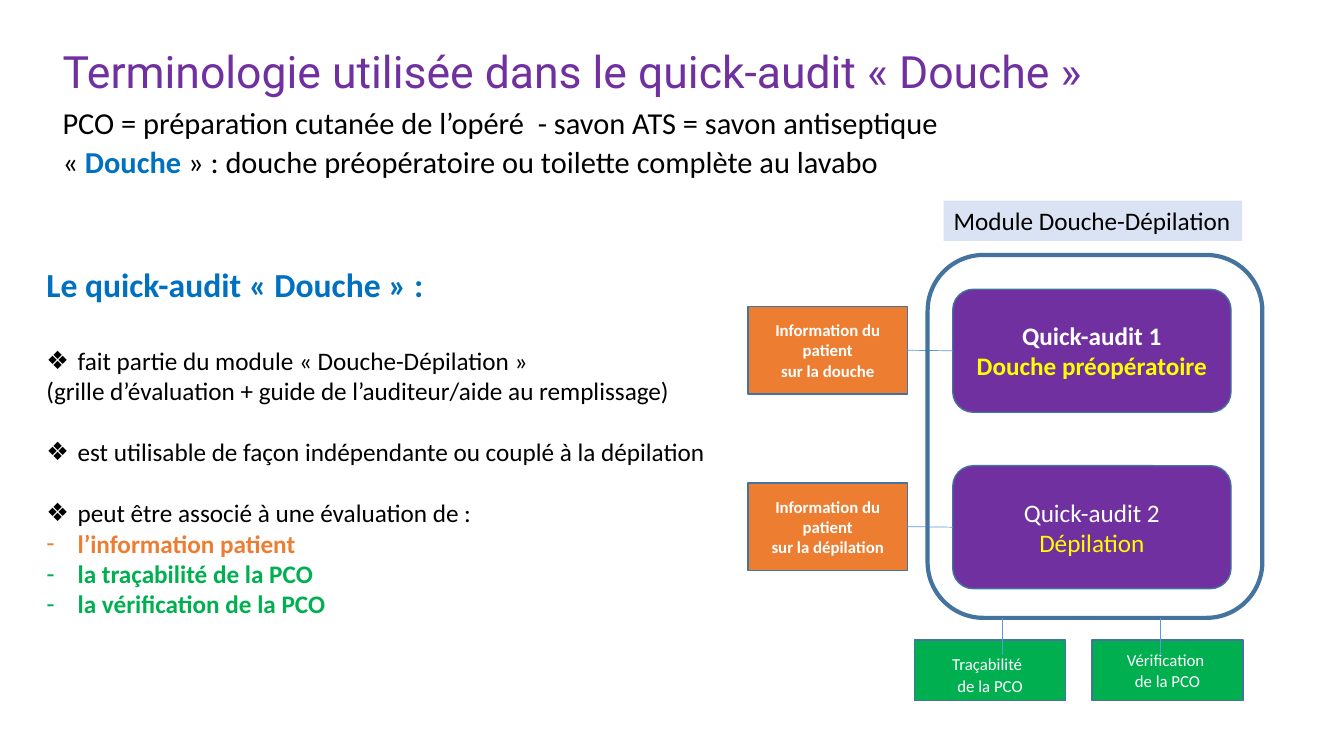
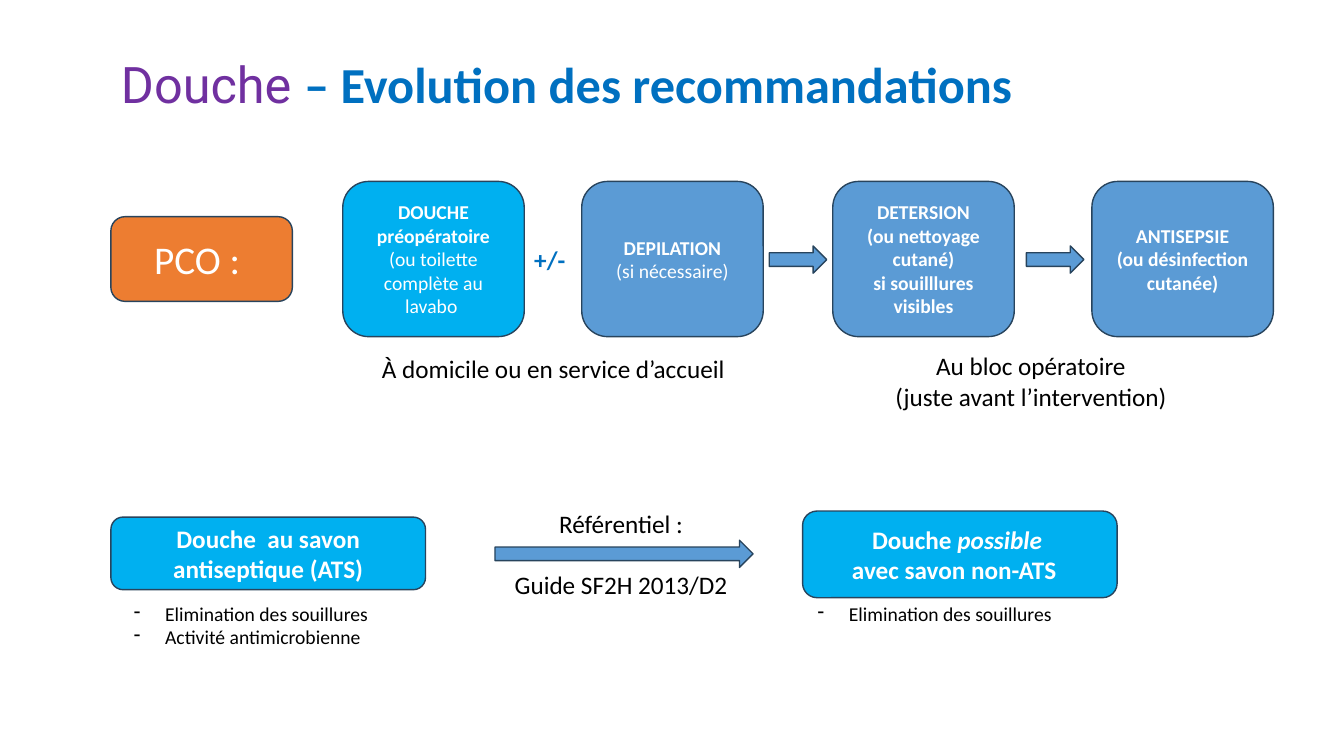
from dataclasses import dataclass, field

from lxml import etree
from pptx import Presentation
from pptx.dml.color import RGBColor
from pptx.enum.shapes import MSO_CONNECTOR, MSO_SHAPE
from pptx.enum.text import MSO_ANCHOR, MSO_AUTO_SIZE, PP_ALIGN
from pptx.oxml.ns import qn
from pptx.util import Inches, Pt

COLORS = {
    "purple": "7030A0", "blue": "0070C0", "sky": "00B0F0", "steel": "5B9BD5",
    "orange": "ED7D31", "green": "00B050", "yellow": "FFFF00", "pale": "DAE3F3",
    "white": "FFFFFF", "black": "000000", "outline": "43739E", "dark": "28445D",
}
LEFT, CENTER = PP_ALIGN.LEFT, PP_ALIGN.CENTER
LEFT_SIDE, RIGHT_SIDE = 1, 3


def rgb(name):
    return RGBColor.from_string(COLORS[name])


@dataclass
class Style:
    size: float = 18
    color: str = "black"
    bold: bool = False
    italic: bool = False
    font: str = "Calibri"


@dataclass
class Para:
    """A paragraph: (text, style changes) runs and its own spacing."""
    runs: list
    bullet: str = ""
    before: float = 0
    spacing: float = 1.0


def line(text, bullet="", before=0, spacing=1.0, **changes):
    """A paragraph with a single run."""
    return Para([(text, changes)], bullet, before, spacing)


@dataclass
class Deck:
    prs: object
    outline: str = "outline"
    slide: object = field(default=None)

    def new_slide(self, layout, outline):
        self.slide = self.prs.slides.add_slide(self.prs.slide_layouts[layout])
        self.outline = outline

    def set_text(self, frame, paragraphs, align=LEFT, **base):
        for index, content in enumerate(paragraphs):
            paragraph = frame.paragraphs[0] if index == 0 else frame.add_paragraph()
            paragraph.alignment = align
            paragraph.line_spacing = content.spacing
            paragraph.space_before = Pt(content.before)
            self.set_bullet(paragraph, content.bullet)
            for text, changes in content.runs:
                run = paragraph.add_run()
                run.text = text
                style = Style(**{**base, **changes})
                run.font.name = style.font
                run.font.size = Pt(style.size)
                run.font.bold = style.bold
                run.font.italic = style.italic
                run.font.color.rgb = rgb(style.color)

    def set_bullet(self, paragraph, char):
        properties = paragraph._p.get_or_add_pPr()
        indent = Inches(0.31) if char else 0
        properties.set("marL", str(indent))
        properties.set("indent", str(-indent))
        if char:
            etree.SubElement(properties, qn("a:buChar")).set("char", char)
        else:
            etree.SubElement(properties, qn("a:buNone"))

    def placeholder(self, idx, at, paragraphs, anchor=MSO_ANCHOR.TOP, **base):
        holder = self.slide.placeholders[idx]
        holder.left, holder.top, holder.width, holder.height = map(Inches, at)
        frame = holder.text_frame
        frame.word_wrap = True
        frame.auto_size = MSO_AUTO_SIZE.NONE
        frame.vertical_anchor = anchor
        self.set_text(frame, paragraphs, **base)

    def text(self, at, paragraphs, align=LEFT, wrap=True, fill=None, **base):
        box = self.slide.shapes.add_textbox(*map(Inches, at))
        if fill:
            box.fill.solid()
            box.fill.fore_color.rgb = rgb(fill)
        box.text_frame.word_wrap = wrap
        box.text_frame.auto_size = MSO_AUTO_SIZE.SHAPE_TO_FIT_TEXT
        self.set_text(box.text_frame, paragraphs, align, **base)

    def shape(self, kind, at, fill=None, paragraphs=(), weight=1, **base):
        shape = self.slide.shapes.add_shape(kind, *map(Inches, at))
        shape.shadow.inherit = False
        if fill:
            shape.fill.solid()
            shape.fill.fore_color.rgb = rgb(fill)
        else:
            shape.fill.background()
        shape.line.color.rgb = rgb(self.outline)
        shape.line.width = Pt(weight)
        shape.text_frame.word_wrap = True
        shape.text_frame.vertical_anchor = MSO_ANCHOR.MIDDLE
        self.set_text(shape.text_frame, paragraphs, CENTER, **{"color": "white", **base})
        return shape

    def rounded(self, *args, **options):
        return self.shape(MSO_SHAPE.ROUNDED_RECTANGLE, *args, **options)

    def rect(self, *args, **options):
        return self.shape(MSO_SHAPE.RECTANGLE, *args, **options)

    def arrow(self, left, top, width):
        self.shape(MSO_SHAPE.RIGHT_ARROW, (left, top, width, 0.27), "steel")

    def connector(self, start=(0, 0), end=(0, 0)):
        link = self.slide.shapes.add_connector(
            MSO_CONNECTOR.STRAIGHT, *map(Inches, (*start, *end)))
        link.line.color.rgb = rgb("steel")
        link.line.width = Pt(0.5)
        etree.SubElement(link._element.spPr, qn("a:effectLst"))
        return link

    def link_boxes(self, source, target):
        """Connect the right side of source to the left side of target."""
        link = self.connector()
        link.begin_connect(source, RIGHT_SIDE)
        link.end_connect(target, LEFT_SIDE)


def terminology_slide(deck):
    deck.new_slide(3, "outline")
    deck.placeholder(0, (0.52, 0.53, 12.29, 0.55), [
        line("Terminologie utilisée dans le quick-audit « Douche »", spacing=0.7),
    ], size=31.8, font="Roboto", color="purple")
    deck.placeholder(1, (0.52, 1.08, 12.29, 0.74), [
        line("PCO = préparation cutanée de l’opéré  - savon ATS = savon antiseptique",
             spacing=0.7),
        Para([("« ", {}), ("Douche", {"color": "blue", "bold": True}),
              (" » : douche préopératoire ou toilette complète au lavabo", {})],
             before=10, spacing=0.7),
    ], size=21.7)
    deck.placeholder(2, (0.36, 2.57, 7.13, 3.64), [
        line("Le quick-audit « Douche » :", size=24, color="blue", bold=True),
        line("fait partie du module « Douche-Dépilation »", "❖", 29.3),
        line("(grille d’évaluation + guide de l’auditeur/aide au remplissage)"),
        line("est utilisable de façon indépendante ou couplé à la dépilation", "❖", 22),
        line("peut être associé à une évaluation de :", "❖", 22),
        line("l’information patient", "-", color="orange", bold=True),
        line("la traçabilité de la PCO", "-", color="green", bold=True),
        line("la vérification de la PCO", "-", color="green", bold=True),
    ])

    audits = [
        (2.87, "Quick-audit 1", "Douche préopératoire", True, "sur la douche"),
        (4.62, "Quick-audit 2", "Dépilation", False, "sur la dépilation"),
    ]
    for top, audit_name, subject, bold, topic in audits:
        audit = deck.rounded((9.45, top, 2.76, 1.22), "purple", [
            line(audit_name), line(subject, color="yellow")], bold=bold)
        information = deck.rect((7.42, top + 0.17, 1.58, 0.87), "orange", [
            line("Information du patient"), line(topic)], size=12, bold=True)
        deck.link_boxes(information, audit)
    deck.rounded((9.2, 2.53, 3.32, 3.6), weight=3)

    checks = [
        (9.07, 9.94, [("Traçabilité", {}), (" ", {"size": 18})]),
        (10.83, 11.51, [("Vérification ", {})]),
    ]
    for left, link_x, heading in checks:
        deck.rect((left, 6.35, 1.5, 0.6), "green",
                  [Para(heading), line("de la PCO")], size=12)
        deck.connector((link_x, 6.13), (link_x, 6.5))
    deck.text((9.36, 1.99, 2.96, 0.4), [line("Module Douche-Dépilation")], fill="pale")


def recommendations_slide(deck):
    deck.new_slide(5, "dark")
    deck.placeholder(0, (1.1, 0.14, 11.5, 1.45), [
        Para([("Douche ", {"font": "Roboto", "color": "purple"}),
              ("– Evolution des recommandations", {"color": "blue", "bold": True})],
             spacing=0.9),
    ], MSO_ANCHOR.MIDDLE, size=36)

    deck.rounded((1.1, 2.15, 1.8, 0.84), "orange", [line("PCO : ")], size=28)
    steps = [
        (3.4, "sky", [line("DOUCHE"), line("préopératoire"),
                      line("(ou toilette complète au lavabo ", bold=False)]),
        (5.77, "steel", [line("DEPILATION"), line("(si nécessaire)", bold=False)]),
        (8.26, "steel", [line("DETERSION"), line("(ou nettoyage cutané)"),
                         line("si souilllures visibles")]),
        (10.83, "steel", [line("ANTISEPSIE"), line("(ou désinfection cutanée)")]),
    ]
    for left, fill, step in steps:
        deck.rounded((left, 1.8, 1.8, 1.54), fill, step, **{"size": 14, "bold": True})
    deck.text((5.2, 2.37, 0.59, 0.4), [line("+/-")], color="blue", bold=True)
    for left in (7.63, 10.18):
        deck.arrow(left, 2.44, 0.57)
    deck.text((3.69, 3.46, 3.64, 0.4), [line("À domicile ou en service d’accueil")],
              wrap=False)
    deck.text((8.71, 3.43, 3.03, 0.71), [
        line("Au bloc opératoire"), line("(juste avant l’intervention)")], CENTER, False)

    deck.rounded((1.1, 5.13, 3.12, 0.72), "sky",
                 [line("Douche  au savon antiseptique (ATS)")], bold=True)
    deck.rounded((7.96, 5.07, 3.12, 0.86), "sky", [
        Para([("Douche ", {}), ("possible ", {"italic": True})]),
        line("avec savon non-ATS  ")], bold=True)
    removal = line("Elimination des souillures", "-")
    deck.text((1.23, 5.92, 2.86, 0.57),
              [removal, line("Activité antimicrobienne", "-")], size=14)
    deck.text((8.01, 5.92, 2.82, 0.34), [removal], size=14)
    deck.text((4.99, 4.99, 2.34, 1.01), [
        line("Référentiel :"), line("Guide SF2H 2013/D2", before=22)], CENTER, False)
    deck.arrow(4.91, 5.36, 2.56)


def main():
    prs = Presentation()
    prs.slide_width, prs.slide_height = Inches(13.33), Inches(7.5)
    deck = Deck(prs)
    terminology_slide(deck)
    recommendations_slide(deck)
    prs.save("out.pptx")


if __name__ == "__main__":
    main()
